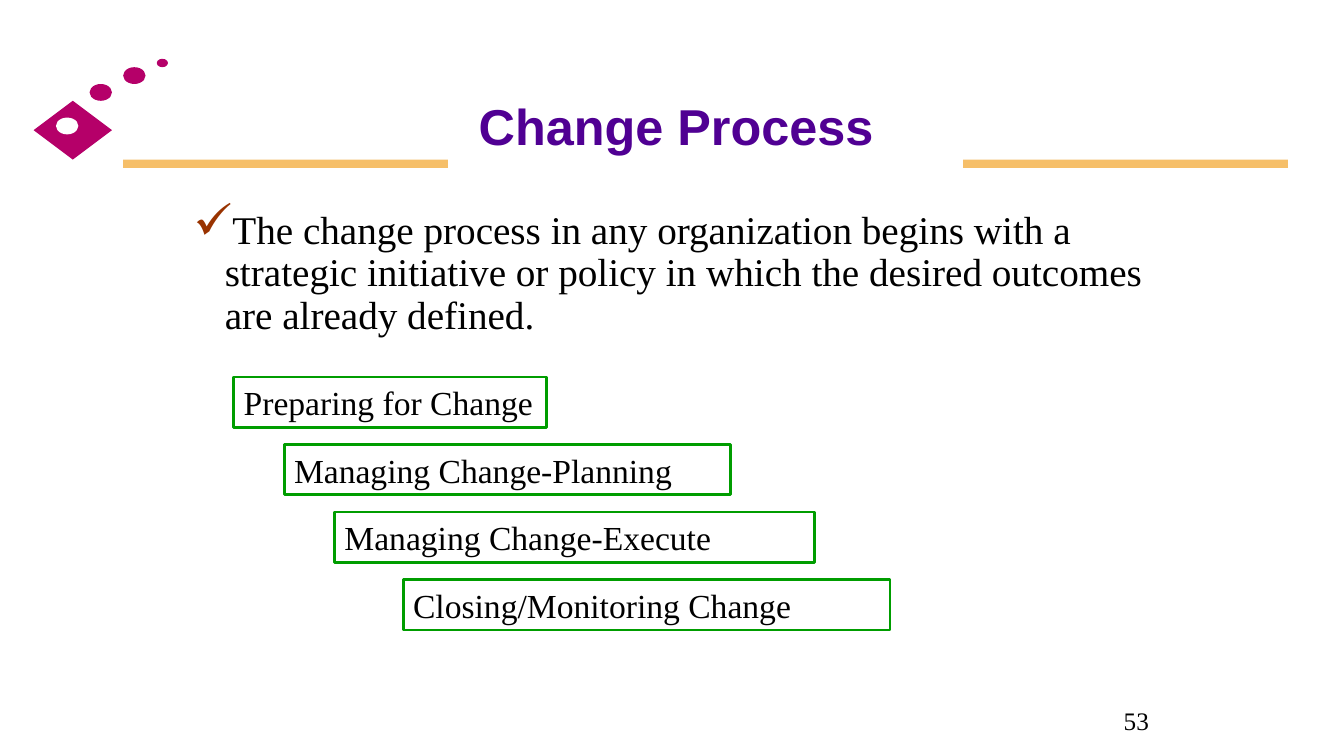
"""Build the Change Process slide with its staircase of four stages."""
from dataclasses import dataclass

from lxml.etree import SubElement
from pptx import Presentation
from pptx.dml.color import RGBColor
from pptx.enum.shapes import MSO_SHAPE
from pptx.enum.text import MSO_ANCHOR, MSO_AUTO_SIZE, PP_ALIGN
from pptx.oxml.ns import qn
from pptx.shapes.autoshape import Shape
from pptx.slide import Slide
from pptx.text.text import _Paragraph
from pptx.util import Pt

COLORS = {
    "white": "FFFFFF",
    "black": "000000",
    "gold": "F6BF69",
    "magenta": "B50069",
    "purple": "500093",
    "green": "009D00",
    "rust": "993300",
}
SERIF = "Times New Roman"
STAGE_TOP = 269.3
STAGE_PITCH = 48.24
STAGE_HEIGHT = 36


@dataclass(frozen=True)
class Box:
    left: float
    top: float
    width: float
    height: float


@dataclass(frozen=True)
class Ornament:
    kind: MSO_SHAPE
    box: Box
    color: str


@dataclass(frozen=True)
class Stage:
    label: str
    left: float
    width: float
    wrap: bool = True


ORNAMENTS = [
    Ornament(MSO_SHAPE.RECTANGLE, Box(88, 114, 232, 6), "gold"),
    Ornament(MSO_SHAPE.DIAMOND, Box(24, 72, 56, 42), "magenta"),
    Ornament(MSO_SHAPE.OVAL, Box(40, 84, 16, 12), "white"),
    Ornament(MSO_SHAPE.OVAL, Box(64, 60, 16, 12), "magenta"),
    Ornament(MSO_SHAPE.OVAL, Box(88, 48, 16, 12), "magenta"),
    Ornament(MSO_SHAPE.OVAL, Box(112, 42, 8, 6), "magenta"),
    Ornament(MSO_SHAPE.RECTANGLE, Box(688, 114, 232, 6), "gold"),
]

STAGES = [
    Stage("Preparing for Change", 167, 223.2, wrap=False),
    Stage("Managing Change-Planning", 203, 319),
    Stage("Managing Change-Execute", 239, 342.7),
    Stage("Closing/Monitoring Change", 288, 347.8),
]


def color(name: str) -> RGBColor:
    """Return the named palette colour."""
    return RGBColor.from_string(COLORS[name])


def add_filled_shape(slide: Slide, kind: MSO_SHAPE, box: Box, fill: str) -> Shape:
    """Add a flat preset shape without an outline."""
    shape = slide.shapes.add_shape(
        kind, Pt(box.left), Pt(box.top), Pt(box.width), Pt(box.height)
    )
    shape.shadow.inherit = False
    shape.fill.solid()
    shape.fill.fore_color.rgb = color(fill)
    shape.line.fill.background()
    return shape


def add_run(paragraph: _Paragraph, text: str, size: float, font: str = SERIF,
            fill: str = "black", bold: bool = False) -> None:
    """Append one formatted run."""
    run = paragraph.add_run()
    run.text = text
    run.font.name = font
    run.font.size = Pt(size)
    run.font.bold = bold
    run.font.color.rgb = color(fill)


def add_text_box(slide: Slide, box: Box) -> Shape:
    """Add an empty wrapping text box."""
    shape = slide.shapes.add_textbox(
        Pt(box.left), Pt(box.top), Pt(box.width), Pt(box.height)
    )
    shape.text_frame.word_wrap = True
    return shape


def add_check_bullet(paragraph: _Paragraph) -> None:
    """Give the paragraph a hanging rust-coloured check mark."""
    properties = paragraph._p.get_or_add_pPr()
    properties.set("marL", str(Pt(22.5)))
    properties.set("indent", str(Pt(-22.5)))
    bullet_color = SubElement(properties, qn("a:buClr"))
    SubElement(bullet_color, qn("a:srgbClr"), val=COLORS["rust"])
    SubElement(properties, qn("a:buSzPct"), val="127000")
    SubElement(properties, qn("a:buChar"), char="✓")


def add_stage(slide: Slide, stage: Stage, index: int) -> None:
    """Add one outlined step of the staircase."""
    box = Box(stage.left, STAGE_TOP + index * STAGE_PITCH, stage.width, STAGE_HEIGHT)
    shape = add_filled_shape(slide, MSO_SHAPE.RECTANGLE, box, "white")
    shape.line.color.rgb = color("green")
    shape.line.width = Pt(2)
    frame = shape.text_frame
    frame.word_wrap = stage.wrap
    frame.auto_size = MSO_AUTO_SIZE.SHAPE_TO_FIT_TEXT
    frame.vertical_anchor = MSO_ANCHOR.TOP
    paragraph = frame.paragraphs[0]
    paragraph.alignment = PP_ALIGN.LEFT
    add_run(paragraph, stage.label, 24)


def main() -> None:
    """Build and save the presentation."""
    presentation = Presentation()
    presentation.slide_width = Pt(960)
    presentation.slide_height = Pt(540)
    slide = presentation.slides.add_slide(presentation.slide_layouts[6])

    for ornament in ORNAMENTS:
        add_filled_shape(slide, ornament.kind, ornament.box, ornament.color)

    title = add_text_box(slide, Box(144, 64, 678, 50))
    title.text_frame.vertical_anchor = MSO_ANCHOR.MIDDLE
    paragraph = title.text_frame.paragraphs[0]
    paragraph.alignment = PP_ALIGN.CENTER
    paragraph.line_spacing = 1.04
    add_run(paragraph, "Change Process", 36, "Arial", "purple", bold=True)

    body = add_text_box(slide, Box(131, 147, 703.5, 98.6))
    paragraph = body.text_frame.paragraphs[0]
    add_check_bullet(paragraph)
    paragraph.line_spacing = 0.9
    add_run(
        paragraph,
        "The change process in any organization begins with a strategic initiative "
        "or policy in which the desired outcomes are already defined.",
        28,
    )

    for index, stage in enumerate(STAGES):
        add_stage(slide, stage, index)

    number = add_text_box(slide, Box(795.6, 500.4, 44, 29))
    add_run(number.text_frame.paragraphs[0], "53", 18)

    presentation.save("out.pptx")


if __name__ == "__main__":
    main()
